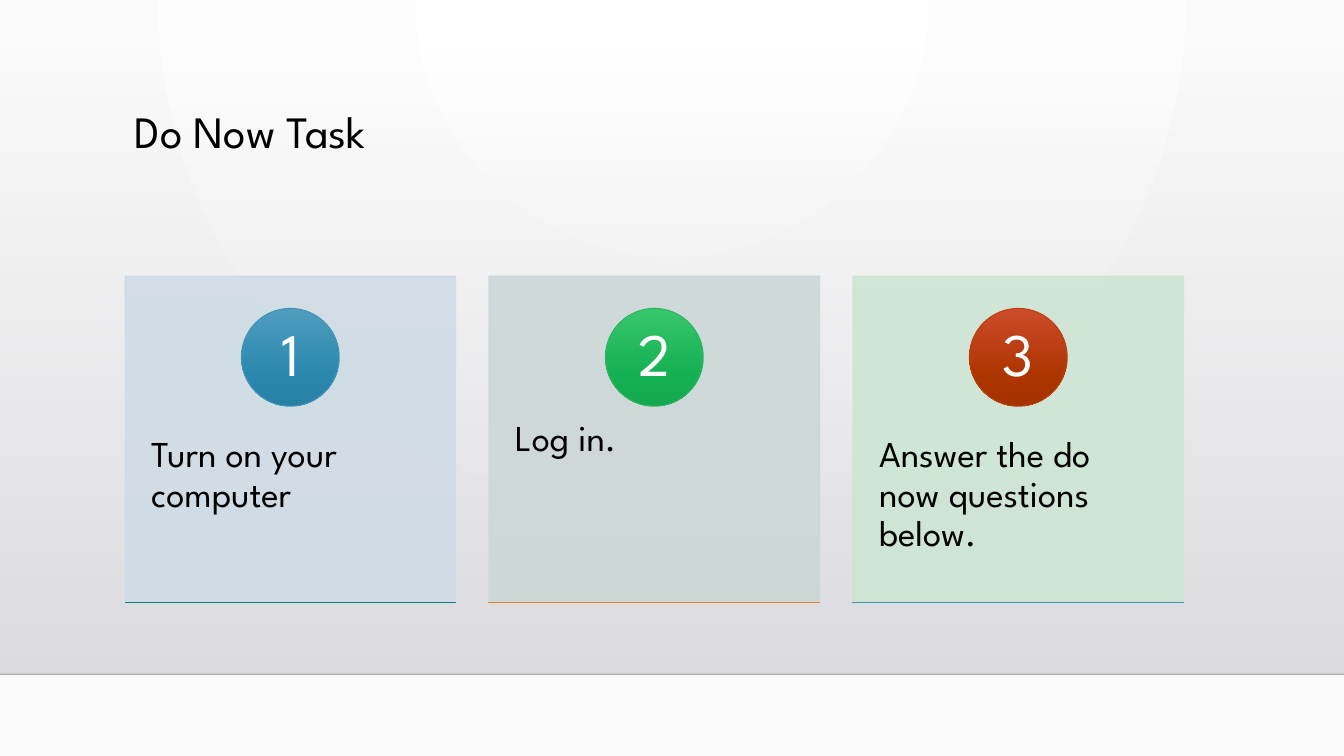
from lxml.etree import SubElement
from pptx import Presentation
from pptx.dml.color import RGBColor
from pptx.enum.shapes import MSO_CONNECTOR, MSO_SHAPE
from pptx.enum.text import MSO_ANCHOR, PP_ALIGN
from pptx.oxml.ns import qn
from pptx.util import Inches, Pt


def rgb(value):
    return RGBColor.from_string(value)


def set_alpha(fill_parent, percent):
    color = next(fill_parent.iter(qn("a:srgbClr")))
    SubElement(color, qn("a:alpha"), val=str(percent * 1000))


def set_gradient(fill, parent, stops, focus=None):
    fill.gradient()
    grad = next(parent.iter(qn("a:gradFill")))
    for child in list(grad):
        grad.remove(child)
    gs_list = SubElement(grad, qn("a:gsLst"))
    for pos, color, alpha in stops:
        gs = SubElement(gs_list, qn("a:gs"), pos=str(pos * 1000))
        clr = SubElement(gs, qn("a:srgbClr"), val=color)
        if alpha < 100:
            SubElement(clr, qn("a:alpha"), val=str(alpha * 1000))
    if focus:
        path = SubElement(grad, qn("a:path"))
        path.set("path", "circle")
        sides = {k: str(v * 1000) for k, v in zip("ltrb", focus)}
        SubElement(path, qn("a:fillToRect"), **sides)
    else:
        SubElement(grad, qn("a:lin"), ang="5400000", scaled="0")


class SlideBuilder:
    font = "League Spartan"

    def __init__(self, slide):
        self.slide = slide

    def background(self, stops, focus):
        set_gradient(self.slide.background.fill, self.slide.element, stops, focus)

    def shape(self, kind, x, y, w, h, line=None):
        sp = self.slide.shapes.add_shape(kind, Inches(x), Inches(y), Inches(w), Inches(h))
        sp.shadow.inherit = False
        if line:
            sp.line.color.rgb = rgb(line)
            sp.line.width = Pt(0.75)
        else:
            sp.line.fill.background()
        return sp

    def panel(self, x, y, w, h, color, alpha):
        sp = self.shape(MSO_SHAPE.RECTANGLE, x, y, w, h, color)
        sp.fill.solid()
        sp.fill.fore_color.rgb = rgb(color)
        set_alpha(sp.fill._xPr.find(qn("a:solidFill")), alpha)
        set_alpha(sp.line._ln, alpha)

    def gradient_shape(self, kind, x, y, w, h, stops, line=None):
        sp = self.shape(kind, x, y, w, h, line)
        set_gradient(sp.fill, sp.element.spPr, stops)

    def glossy(self, kind, x, y, w, h, palette):
        top, middle, bottom, line = palette
        stops = [(0, top, 100), (69, middle, 100), (100, bottom, 100)]
        self.gradient_shape(kind, x, y, w, h, stops, line)

    def line(self, x1, y1, x2, y2, color, width, alpha):
        cn = self.slide.shapes.add_connector(
            MSO_CONNECTOR.STRAIGHT, Inches(x1), Inches(y1), Inches(x2), Inches(y2))
        cn.line.color.rgb = rgb(color)
        cn.line.width = Pt(width)
        set_alpha(cn.line._ln, alpha)
        SubElement(cn._element.spPr, qn("a:effectLst"))

    def text(self, x, y, w, h, text, size, color="000000", inset=(0.1, 0.05),
             align=PP_ALIGN.LEFT, anchor=MSO_ANCHOR.TOP):
        sp = self.slide.shapes.add_textbox(Inches(x), Inches(y), Inches(w), Inches(h))
        tf = sp.text_frame
        tf.word_wrap = True
        tf.vertical_anchor = anchor
        tf.margin_left = tf.margin_right = Inches(inset[0])
        tf.margin_top = tf.margin_bottom = Inches(inset[1])
        p = tf.paragraphs[0]
        p.alignment = align
        p.line_spacing = 0.9
        r = p.add_run()
        r.text = text
        r.font.name = self.font
        r.font.size = Pt(size)
        r.font.color.rgb = rgb(color)


BLUE = ("4F9EC0", "2A87AE", "2880A5", "4294B6")
GREEN = ("39C66C", "14B053", "13A74E", "2CB663")
RED = ("CD4B2A", "AC3500", "A43300", "BC410A")
TEAL = ("2C8B8A", "007473", "006E6D", "087D7C")
ORANGE = ("E99139", "DB7805", "D07205", "DF8822")

STEPS = [
    ("Turn on your computer", "CFDCE5", BLUE, TEAL),
    ("Log in.", "CCD7D7", GREEN, ORANGE),
    ("Answer the do now questions below.", "CDE5D3", RED, BLUE),
]
LEFT, TOP, CARD_W, CARD_H, PITCH = 1.24, 2.74, 3.28, 3.24, 3.61
BADGE, NUMBER = 0.97, 0.69


def main():
    prs = Presentation()
    prs.slide_width = Inches(13.33)
    prs.slide_height = Inches(7.5)
    s = SlideBuilder(prs.slides.add_slide(prs.slide_layouts[6]))

    s.background([(0, "FFFFFF", 100), (100, "FAFAFA", 100)], (43, 0, 43, 100))
    s.gradient_shape(MSO_SHAPE.RECTANGLE, 0, 0.51, 13.33, 6.18,
                     [(0, "DCDCE0", 0), (100, "DEDEE2", 100)])
    s.line(0, 6.69, 13.33, 6.69, "000001", 1, 20)
    s.text(LEFT, 1.04, 10.5, 1.15, "Do Now Task", 32)

    for i, (label, color, badge, accent) in enumerate(STEPS):
        x = LEFT + i * PITCH
        center = x + CARD_W / 2
        s.panel(x, TOP, CARD_W, CARD_H, color, 90)
        s.text(x, 3.97, CARD_W, 1.94, label, 26, inset=(0.26, 0.36))
        s.glossy(MSO_SHAPE.OVAL, center - BADGE / 2, 3.06, BADGE, BADGE, badge)
        s.text(center - NUMBER / 2, 3.2, NUMBER, NUMBER, str(i + 1), 43, "FFFFFF",
               (0.08, 0.01), PP_ALIGN.CENTER, MSO_ANCHOR.MIDDLE)
        s.glossy(MSO_SHAPE.RECTANGLE, x, TOP + CARD_H, CARD_W, 0, accent)

    prs.save("out.pptx")


if __name__ == "__main__":
    main()
